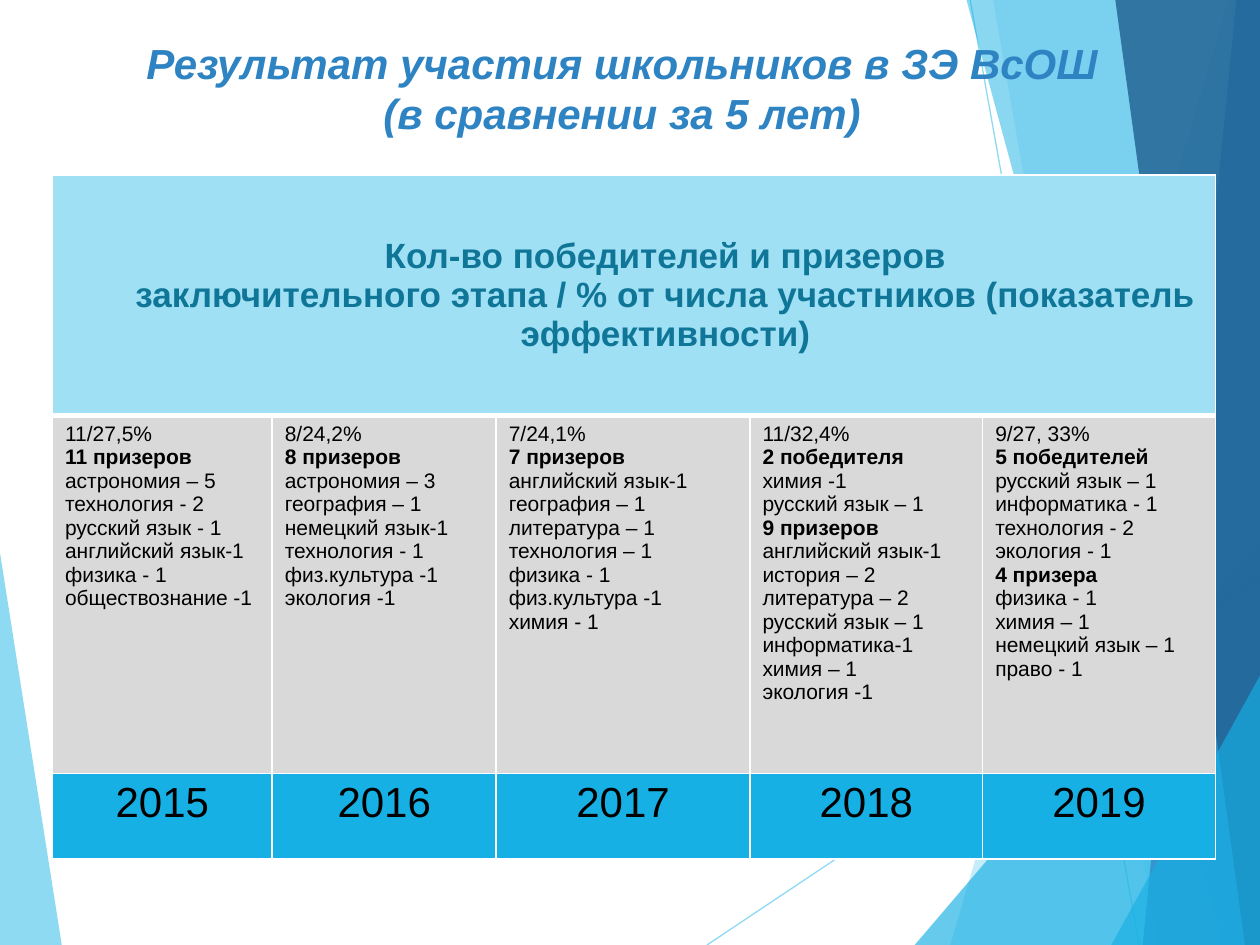
from typing import NamedTuple

from lxml import etree
from pptx import Presentation
from pptx.dml.color import RGBColor
from pptx.enum.shapes import MSO_CONNECTOR
from pptx.enum.text import MSO_ANCHOR, MSO_AUTO_SIZE, PP_ALIGN
from pptx.oxml.ns import qn
from pptx.util import Pt

LINE = MSO_CONNECTOR.STRAIGHT
MIDDLE = MSO_ANCHOR.MIDDLE
TOP = MSO_ANCHOR.TOP
CENTER = PP_ALIGN.CENTER
LEFT = PP_ALIGN.LEFT
FIXED = MSO_AUTO_SIZE.NONE

SKY = RGBColor(0x5F, 0xCB, 0xEF)
AQUA = RGBColor(0x17, 0xB0, 0xE4)
BLUE = RGBColor(0x2E, 0x83, 0xC3)
NAVY = RGBColor(0x22, 0x62, 0x92)
TEAL = RGBColor(0x0F, 0x76, 0x98)
PALE = RGBColor(0x9F, 0xE0, 0xF5)
GRAY = RGBColor(0xD9, 0xD9, 0xD9)
BLACK = RGBColor(0, 0, 0)
WHITE = RGBColor(0xFF, 0xFF, 0xFF)

WIDE, HIGH = 720, 540


class Facet(NamedTuple):
    points: list
    color: RGBColor
    alpha: int


class Ray(NamedTuple):
    start: tuple
    end: tuple


class Style(NamedTuple):
    size: float
    color: RGBColor
    bold: bool = False
    italic: bool = False
    align: PP_ALIGN = LEFT
    indent: float = 0


class Year(NamedTuple):
    name: str
    width: float
    lines: list


def edge(x_top: float, x_low: float) -> list:
    """Outline between a slanted full-height edge and the right side."""
    return [(x_top, 0), (x_low, HIGH), (WIDE, HIGH), (WIDE, 0)]


def corner(x: float, y: float) -> list:
    return [(x, HIGH), (WIDE, y), (WIDE, HIGH)]


WEDGE = Facet([(0, 316), (35.3, HIGH), (0, HIGH)], SKY, 70)
RAYS = [Ray((404, HIGH), (WIDE, 329)), Ray((554.4, 0), (651, HIGH))]
FACETS = [
    Facet(edge(702, 543), SKY, 36),
    Facet(edge(567.5, 661.5), SKY, 20),
    Facet(corner(522.7, 309), AQUA, 66),
    Facet(edge(552.3, 698.5), AQUA, 50),
    Facet(edge(706.5, 653), BLUE, 70),
    Facet(edge(637.3, 711.4), NAVY, 82),
    Facet(corner(635, 386), AQUA, 66),
]

TITLE = ["Результат участия школьников в ЗЭ ВсОШ", "(в сравнении за 5 лет)"]
HEAD = [
    "Кол-во победителей и призеров",
    "заключительного этапа / % от числа участников (показатель эффективности)",
]
YEARS = [
    Year("2015", 125.6, [
        "11/27,5%", "11 призеров", "астрономия – 5", "технология - 2",
        "русский язык - 1 английский язык-1", "физика - 1",
        "обществознание -1"]),
    Year("2016", 128, [
        "8/24,2%", "8 призеров", "астрономия – 3", "география – 1",
        "немецкий язык-1", "технология - 1", "физ.культура -1",
        "экология -1"]),
    Year("2017", 145, [
        "7/24,1%", "7 призеров", "английский язык-1", "география – 1",
        "литература – 1", "технология – 1", "физика - 1",
        "физ.культура -1", "химия - 1"]),
    Year("2018", 133, [
        "11/32,4%", "2 победителя", "химия -1", "русский язык – 1",
        "9 призеров", "английский язык-1", "история – 2",
        "литература – 2", "русский язык – 1", "информатика-1",
        "химия – 1", "экология -1"]),
    Year("2019", 133, [
        "9/27, 33%", "5 победителей", "русский язык – 1",
        "информатика - 1", "технология - 2", "экология - 1", "4 призера",
        "физика - 1", "химия – 1", "немецкий язык – 1", "право - 1"]),
]
ROWS = [137.5, 204.5, 49]

TITLE_STYLE = Style(24, BLUE, bold=True, italic=True, align=CENTER)
HEAD_STYLE = Style(20, TEAL, bold=True, align=CENTER, indent=36)
BODY_STYLE = Style(12, BLACK)
COUNT_STYLE = BODY_STYLE._replace(bold=True)
YEAR_STYLE = Style(24, BLACK, align=CENTER)


def fade(shape, alpha: int) -> None:
    """Set the opacity, in percent, of the shape's first solid colour."""
    color = next(shape.element.iter(qn("a:srgbClr")))
    etree.SubElement(color, qn("a:alpha")).set("val", str(alpha * 1000))


def draw_facet(slide, facet: Facet) -> None:
    points = [(Pt(x), Pt(y)) for x, y in facet.points]
    pen = slide.shapes.build_freeform(*points[0])
    pen.add_line_segments(points[1:], close=True)
    shape = pen.convert_to_shape()
    shape.shadow.inherit = False
    shape.fill.solid()
    shape.fill.fore_color.rgb = facet.color
    shape.line.fill.background()
    fade(shape, facet.alpha)


def draw_ray(slide, ray: Ray) -> None:
    ends = [Pt(n) for n in ray.start + ray.end]
    line = slide.shapes.add_connector(LINE, *ends)
    line.line.color.rgb = SKY
    line.line.width = Pt(0.75)
    fade(line, 70)
    etree.SubElement(line.element.spPr, qn("a:effectLst"))


def add_line(frame, index: int, text: str, style: Style) -> None:
    para = frame.paragraphs[0] if index == 0 else frame.add_paragraph()
    para.alignment = style.align
    if style.indent:
        props = para._p.get_or_add_pPr()
        props.set("marL", str(Pt(style.indent)))
        props.set("indent", "0")
    run = para.add_run()
    run.text = text
    font = run.font
    font.name, font.size = "Arial", Pt(style.size)
    font.bold, font.italic = style.bold, style.italic
    font.color.rgb = style.color


def add_border(cell, side: str, width: float) -> None:
    props = cell._tc.get_or_add_tcPr()
    line = etree.SubElement(props, qn(f"a:ln{side}"), w=str(Pt(width)))
    fill = etree.SubElement(line, qn("a:solidFill"))
    etree.SubElement(fill, qn("a:srgbClr"), val=str(WHITE))


def paint_cell(cell, color: RGBColor, top: float = 1, low: float = 1) -> None:
    for side, width in zip("LRTB", (1, 1, top, low)):
        add_border(cell, side, width)
    cell.fill.solid()
    cell.fill.fore_color.rgb = color
    cell.vertical_anchor = TOP


def draw_title(slide) -> None:
    title = slide.shapes.title
    title.left, title.top = Pt(0), Pt(6)
    title.width, title.height = Pt(711), Pt(88.5)
    frame = title.text_frame
    frame.word_wrap, frame.auto_size = True, FIXED
    frame.vertical_anchor = MIDDLE
    for i, text in enumerate(TITLE):
        add_line(frame, i, text, TITLE_STYLE)
    title.element.getparent().append(title.element)


def draw_table(slide) -> None:
    width = sum(year.width for year in YEARS)
    table = slide.shapes.add_table(
        len(ROWS), len(YEARS), Pt(30), Pt(100), Pt(width), Pt(sum(ROWS))
    ).table
    table.first_row = table.horz_banding = False
    for row, height in zip(table.rows, ROWS):
        row.height = Pt(height)
    for col, year in enumerate(YEARS):
        table.columns[col].width = Pt(year.width)
        head, body, foot = (table.cell(row, col) for row in range(len(ROWS)))
        paint_cell(head, PALE, low=3)
        paint_cell(body, GRAY, top=3)
        paint_cell(foot, AQUA)
        for i, text in enumerate(year.lines):
            count = "призер" in text or "победител" in text
            add_line(body.text_frame, i, text,
                     COUNT_STYLE if count else BODY_STYLE)
        add_line(foot.text_frame, 0, year.name, YEAR_STYLE)
    head = table.cell(0, 0)
    head.merge(table.cell(0, len(YEARS) - 1))
    head.vertical_anchor = MIDDLE
    for i, text in enumerate(HEAD):
        add_line(head.text_frame, i, text, HEAD_STYLE)


def main() -> None:
    deck = Presentation()
    deck.slide_width, deck.slide_height = Pt(WIDE), Pt(HIGH)
    slide = deck.slides.add_slide(deck.slide_layouts[5])
    draw_facet(slide, WEDGE)
    for ray in RAYS:
        draw_ray(slide, ray)
    for facet in FACETS:
        draw_facet(slide, facet)
    draw_title(slide)
    draw_table(slide)
    deck.save("out.pptx")


if __name__ == "__main__":
    main()
